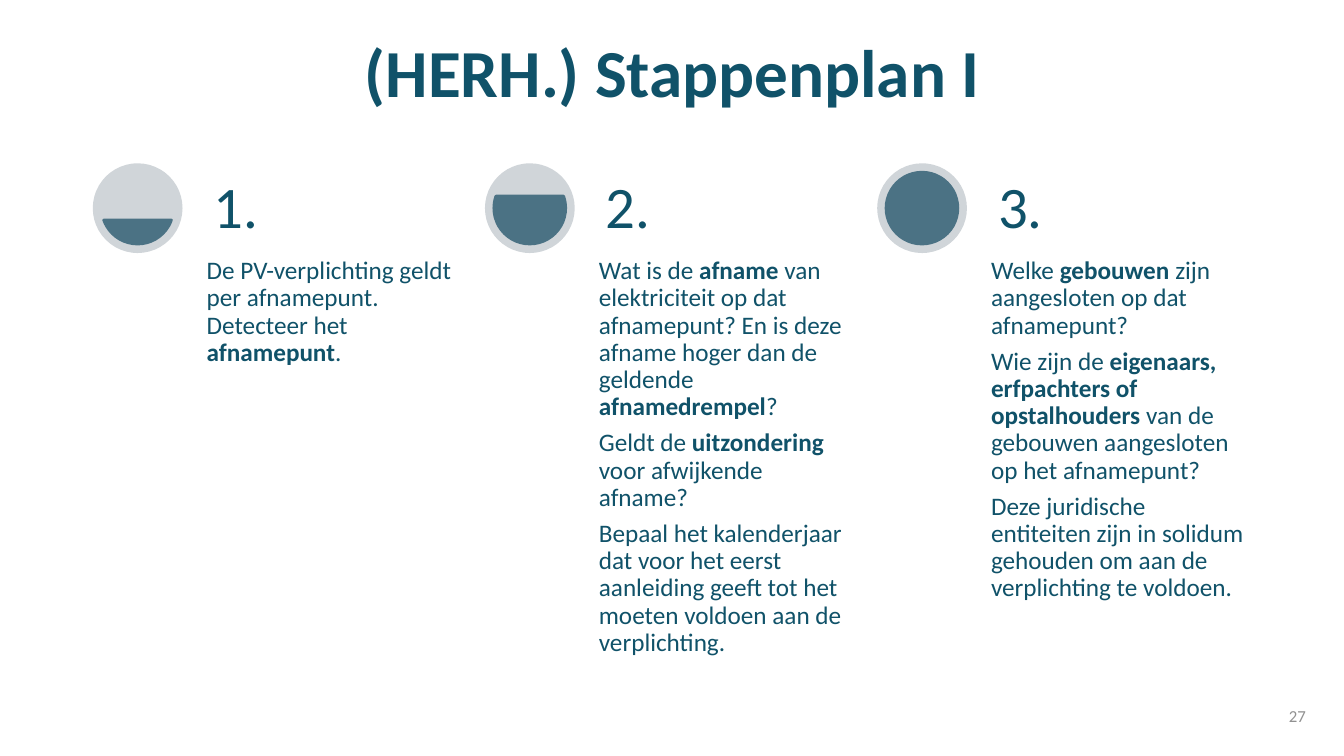
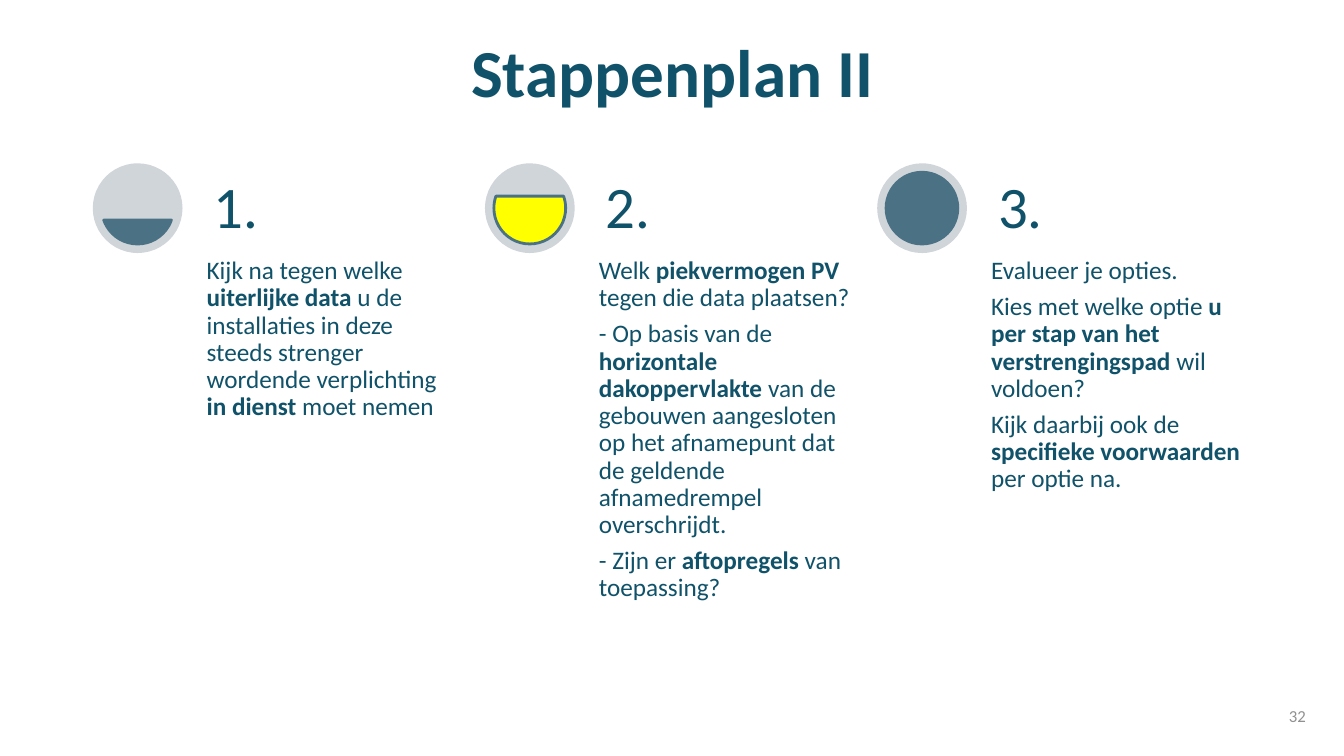
from math import asin, degrees

from pptx import Presentation
from pptx.dml.color import RGBColor
from pptx.enum.shapes import MSO_SHAPE as SHAPE
from pptx.enum.text import MSO_ANCHOR as ANCHOR, MSO_AUTO_SIZE as AUTO, PP_ALIGN as ALIGN
from pptx.util import Inches, Pt

COLORS = {"ink": "105269", "ring": "D0D5D9", "level": "4B7284",
          "highlight": "FFFF00", "number": "919191"}
FONT = "Calibri"
LEFT, TOP, PITCH = 0.92, 1.62, 3.89
RING, TEXT_OFFSET, TEXT_W, BODY_H = 0.89, 1.08, 2.63, 3.74

SLIDES = [
    {"title": "(HERH.) Stappenplan I", "number": "27", "highlight": None, "steps": [
        ["De PV-verplichting geldt per afnamepunt. Detecteer het **afnamepunt**."],
        ["Wat is de **afname** van elektriciteit op dat afnamepunt? En is deze afname "
         "hoger dan de geldende **afnamedrempel**?",
         "Geldt de **uitzondering** voor afwijkende afname?",
         "Bepaal het kalenderjaar dat voor het eerst aanleiding geeft tot het moeten "
         "voldoen aan de verplichting."],
        ["Welke **gebouwen **zijn aangesloten op dat afnamepunt?",
         "Wie zijn de **eigenaars, erfpachters of opstalhouders **van de gebouwen "
         "aangesloten op het afnamepunt?",
         "Deze juridische entiteiten zijn in solidum gehouden om aan de verplichting "
         "te voldoen."],
    ]},
    {"title": "Stappenplan II", "number": "32", "highlight": 2, "steps": [
        ["Kijk na tegen welke **uiterlijke data **u de installaties in deze steeds "
         "strenger wordende verplichting **in dienst **moet nemen"],
        ["Welk **piekvermogen PV **tegen die data plaatsen?",
         "- Op basis van de **horizontale dakoppervlakte **van de gebouwen aangesloten "
         "op het afnamepunt dat de geldende afnamedrempel overschrijdt.",
         "- Zijn er **aftopregels **van toepassing?"],
        ["Evalueer je opties.",
         "Kies met welke optie **u per stap van het verstrengingspad **wil voldoen?",
         "Kijk daarbij ook de **specifieke voorwaarden **per optie na."],
    ]},
]


def rgb(name):
    return RGBColor.from_string(COLORS[name])


def set_attrs(obj, values):
    for name, value in values.items():
        setattr(obj, name, value)


def add_runs(p, text, size, color="ink", bold=False):
    for i, part in enumerate(text.split("**")):
        if part:
            r = p.add_run()
            r.text = part
            set_attrs(r.font, {"name": FONT, "size": Pt(size), "bold": bold or i % 2 == 1})
            r.font.color.rgb = rgb(color)


def add_text(slide, box, paragraphs, size, color="ink", inset=0.05,
             anchor=ANCHOR.TOP, para_format=None):
    tf = slide.shapes.add_textbox(*map(Inches, box)).text_frame
    sides = ("left", "top", "right", "bottom")
    set_attrs(tf, {"word_wrap": True, "vertical_anchor": anchor,
                   **{f"margin_{side}": Inches(inset) for side in sides}})
    for i, text in enumerate(paragraphs):
        p = tf.add_paragraph() if i else tf.paragraphs[0]
        set_attrs(p, para_format or {})
        add_runs(p, text, size, color)


def add_title(slide, text):
    sp = slide.shapes.title
    left, top, width, height = map(Inches, (LEFT, 0.52, 11.5, 1.02))
    set_attrs(sp, {"left": left, "top": top, "width": width, "height": height})
    set_attrs(sp.text_frame, {"vertical_anchor": ANCHOR.TOP, "auto_size": AUTO.NONE,
                              "word_wrap": True})
    p = sp.text_frame.paragraphs[0]
    set_attrs(p, {"alignment": ALIGN.CENTER, "line_spacing": Pt(38)})
    add_runs(p, text, 48, bold=True)


def add_round(slide, kind, left, top, size, fill):
    sp = slide.shapes.add_shape(kind, *map(Inches, (left, top, size, size)))
    sp.shadow.inherit = False
    sp.fill.solid()
    sp.fill.fore_color.rgb = rgb(fill)
    sp.line.fill.background()
    return sp


def add_gauge(slide, left, top, share, fill):
    add_round(slide, SHAPE.OVAL, left, top, RING, "ring")
    gap = RING / 10
    sp = add_round(slide, SHAPE.CHORD, left + gap, top + gap, RING - 2 * gap, fill)
    sp.line.color.rgb = rgb("level")
    sp.line.width = Pt(2)
    angle = degrees(asin(1 - 2 * share))
    for i, end in enumerate((angle % 360, 180 - angle)):
        sp.adjustments[i] = end * 0.6


def add_step(slide, left, top, step, count, paragraphs, fill):
    add_gauge(slide, left, top, step / count, fill)
    text_left = left + TEXT_OFFSET
    add_text(slide, (text_left, top, TEXT_W, RING), [f"{step}."], 42, inset=0.12,
             anchor=ANCHOR.BOTTOM, para_format={"line_spacing": 0.9})
    add_text(slide, (text_left, top + RING, TEXT_W, BODY_H), paragraphs, 18,
             para_format={"line_spacing": 0.9, "space_after": Pt(6.3)})


def add_steps_slide(prs, data):
    slide = prs.slides.add_slide(prs.slide_layouts.get_by_name("Title Only"))
    add_title(slide, data["title"])
    steps = data["steps"]
    for step, paragraphs in enumerate(steps, 1):
        fill = "highlight" if step == data["highlight"] else "level"
        add_step(slide, LEFT + (step - 1) * PITCH, TOP, step, len(steps), paragraphs, fill)
    add_text(slide, (10.05, 6.9, 3, 0.4), [data["number"]], 12, "number", inset=0.1,
             anchor=ANCHOR.MIDDLE, para_format={"alignment": ALIGN.RIGHT})


def main():
    prs = Presentation()
    set_attrs(prs, {"slide_width": Inches(13.33), "slide_height": Inches(7.5)})
    for data in SLIDES:
        add_steps_slide(prs, data)
    prs.save("out.pptx")


if __name__ == "__main__":
    main()
